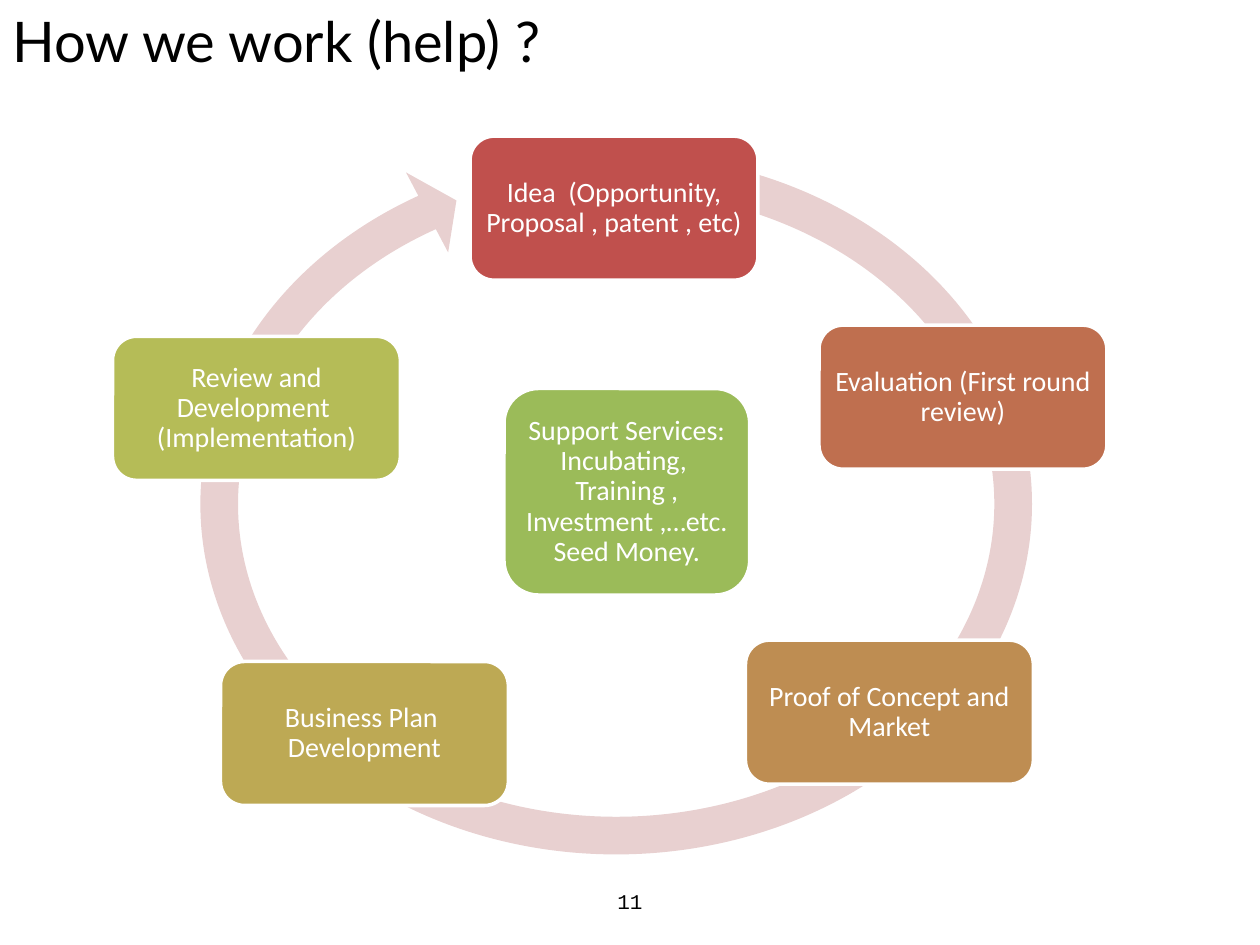
"""Build the "How we work" slide: a five-step cycle around support services."""
from dataclasses import dataclass

from pptx import Presentation
from pptx.dml.color import RGBColor
from pptx.enum.shapes import MSO_SHAPE
from pptx.enum.text import MSO_ANCHOR, PP_ALIGN
from pptx.util import Pt

ROUNDED = MSO_SHAPE.ROUNDED_RECTANGLE
CIRCULAR_ARROW = MSO_SHAPE.CIRCULAR_ARROW
LEFT, CENTER = PP_ALIGN.LEFT, PP_ALIGN.CENTER
TOP, MIDDLE = MSO_ANCHOR.TOP, MSO_ANCHOR.MIDDLE
TITLE_ONLY = 5
WHITE, BLACK, PALE_RED = "FFFFFF", "000000", "E8D0D0"


@dataclass(frozen=True)
class Card:
    text: str
    left: float
    top: float
    fill: str
    width: float = 164.5
    height: float = 82.3


CARDS = [
    Card("Idea  (Opportunity, Proposal , patent , etc)", 268.6, 77.8, "C0504D"),
    Card("Evaluation (First round review)", 468, 185.8, "BF6F4F"),
    Card("Proof of Concept and Market", 426, 365.8, "BE8D52"),
    Card("Business Plan  Development", 126, 378, "BDA954"),
    Card("Review and Development  (Implementation)", 64.3, 192.2, "B5BC57"),
    Card("Support Services: Incubating,  Training , Investment ,…etc. Seed Money.",
         288, 222, "9BBB59", width=140.4, height=118),
]


def color(hex_code: str) -> RGBColor:
    return RGBColor.from_string(hex_code)


def write(frame, text: str, *, font: str, size: float, ink: str = BLACK,
          align=CENTER, anchor=MIDDLE, inset: float | None = None,
          spacing: float = 1.0) -> None:
    frame.word_wrap = True
    frame.vertical_anchor = anchor
    if inset is not None:
        frame.margin_left = frame.margin_right = Pt(inset)
        frame.margin_top = frame.margin_bottom = Pt(inset)
    paragraph = frame.paragraphs[0]
    paragraph.alignment = align
    paragraph.line_spacing = spacing
    run = paragraph.add_run()
    run.text = text
    run.font.name = font
    run.font.size = Pt(size)
    run.font.color.rgb = color(ink)


def draw_cycle(slide) -> None:
    cycle = slide.shapes.add_shape(CIRCULAR_ARROW, Pt(99.4), Pt(72.7), Pt(505.4), Pt(430.6))
    cycle.shadow.inherit = False
    for index, value in enumerate((0.05, 3.13, 142.22, 171.31, 0.06)):
        cycle.adjustments[index] = value
    cycle.fill.solid()
    cycle.fill.fore_color.rgb = color(PALE_RED)
    cycle.line.fill.background()


def draw_card(slide, card: Card) -> None:
    box = slide.shapes.add_shape(ROUNDED, Pt(card.left), Pt(card.top),
                                 Pt(card.width), Pt(card.height))
    box.shadow.inherit = False
    box.fill.solid()
    box.fill.fore_color.rgb = color(card.fill)
    box.line.color.rgb = color(WHITE)
    box.line.width = Pt(2)
    write(box.text_frame, card.text, font="Calibri", size=16, ink=WHITE,
          inset=4.8, spacing=0.9)


def main() -> None:
    deck = Presentation()
    deck.slide_width, deck.slide_height = Pt(720), Pt(540)
    slide = deck.slides.add_slide(deck.slide_layouts[TITLE_ONLY])

    title = slide.shapes.title
    title.left, title.top, title.width, title.height = Pt(0), Pt(0), Pt(648), Pt(90)
    write(title.text_frame, "How we work (help) ?", font="Lato", size=32,
          align=LEFT, anchor=TOP)

    draw_cycle(slide)
    for card in CARDS:
        draw_card(slide, card)

    page_number = slide.shapes.add_textbox(Pt(246), Pt(500.4), Pt(228), Pt(28.8))
    write(page_number.text_frame, "11", font="Courier New", size=12)
    deck.save("out.pptx")


if __name__ == "__main__":
    main()
